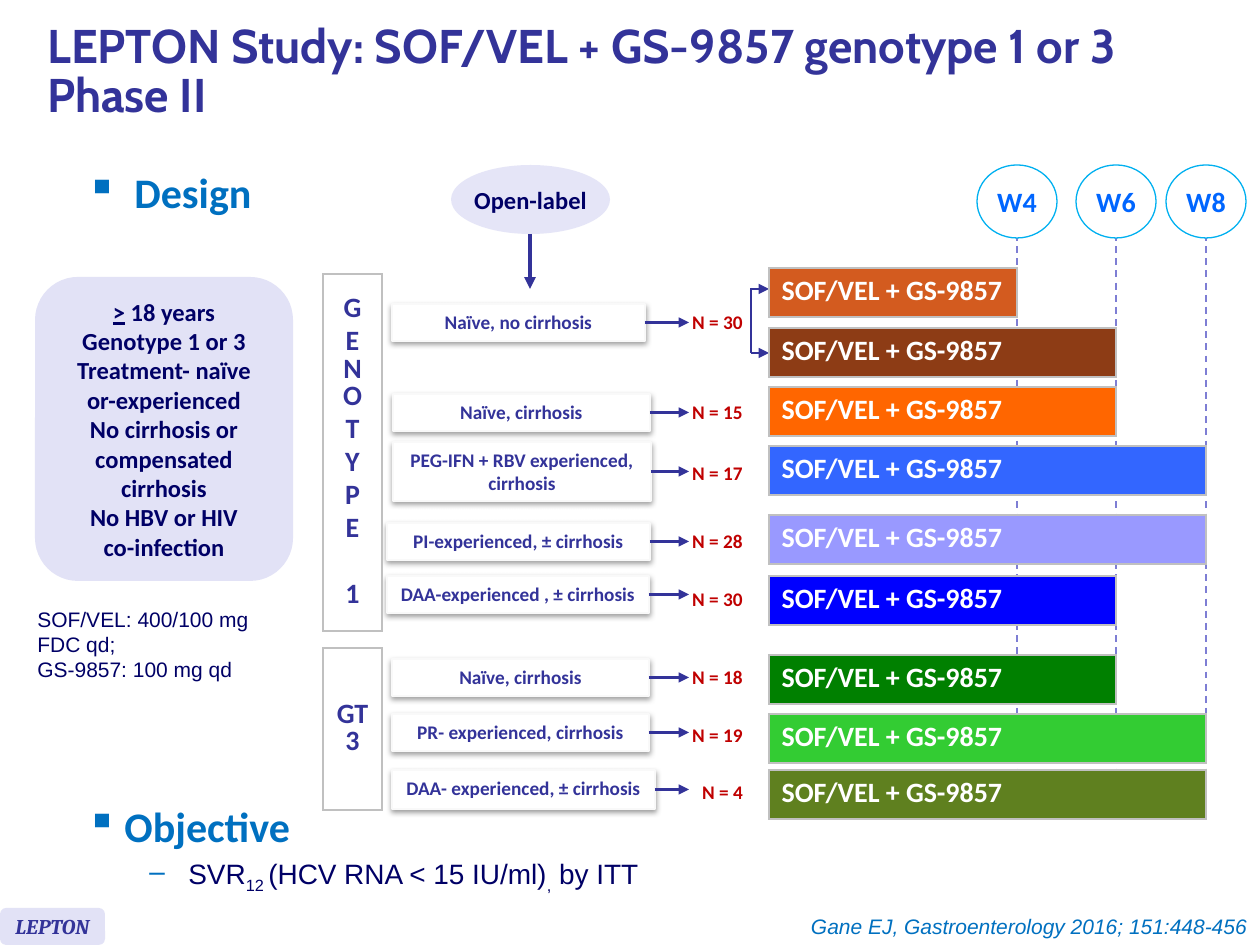
from lxml import etree
from pptx import Presentation, util as u
from pptx.dml.color import RGBColor
from pptx.enum import dml, shapes, text as t
from pptx.oxml import ns

PX = 914400 / 126
INDIGO = RGBColor(0x33, 0x33, 0x99)
NAVY = RGBColor(0x00, 0x00, 0x66)
BLUE = RGBColor(0x00, 0x70, 0xC0)
BRIGHT_BLUE = RGBColor(0x00, 0x66, 0xFF)
SKY = RGBColor(0x00, 0xB0, 0xF0)
RED = RGBColor(0xC0, 0x00, 0x00)
WHITE = RGBColor(0xFF, 0xFF, 0xFF)
OFF_WHITE = RGBColor(0xF9, 0xF9, 0xF9)
LAVENDER = RGBColor(0xE2, 0xE2, 0xF6)
PALE_LAVENDER = RGBColor(0xE5, 0xE5, 0xF7)
PERIWINKLE = RGBColor(0x7E, 0x7E, 0xD4)
LEFT, CENTER, RIGHT = t.PP_ALIGN.LEFT, t.PP_ALIGN.CENTER, t.PP_ALIGN.RIGHT
TOP, MIDDLE = t.MSO_ANCHOR.TOP, t.MSO_ANCHOR.MIDDLE
RECTANGLE = shapes.MSO_SHAPE.RECTANGLE
ROUNDED = shapes.MSO_SHAPE.ROUNDED_RECTANGLE
OVAL = shapes.MSO_SHAPE.OVAL

presentation = Presentation()
presentation.slide_width, presentation.slide_height = u.Inches(10), u.Inches(7.5)
slide = presentation.slides.add_slide(presentation.slide_layouts[6])


def write(frame, content, size, color, font="Calibri", bold=True, italic=False,
          align=LEFT, before=0, spacing=None, bullet=None):
    """Add one paragraph; content is a string or a list of (text, baseline, underline)."""
    paragraph = frame.add_paragraph() if frame.text else frame.paragraphs[0]
    paragraph.alignment = align
    paragraph.space_before = u.Pt(before)
    paragraph.line_spacing = spacing
    if bullet:
        character, margin, hanging = bullet
        properties = paragraph._p.get_or_add_pPr()
        properties.set("marL", str(int(margin * PX)))
        properties.set("indent", str(int(-hanging * PX)))
        bullet_color = etree.SubElement(properties, ns.qn("a:buClr"))
        etree.SubElement(bullet_color, ns.qn("a:srgbClr"), val=str(BLUE))
        etree.SubElement(properties, ns.qn("a:buChar"), char=character)
    runs = [(content, 0, False)] if isinstance(content, str) else content
    for words, baseline, underline in runs:
        run = paragraph.add_run()
        run.text = words
        run.font.size, run.font.name = u.Pt(size), font
        run.font.bold, run.font.italic = bold, italic
        run.font.color.rgb = color
        if underline:
            run.font.underline = True
        if baseline:
            run._r.get_or_add_rPr().set("baseline", str(baseline * 1000))


def draw_line(x1, y1, x2, y2, color=INDIGO, width=1.5, arrow=True):
    ends = [int(value * PX) for value in (x1, y1, x2, y2)]
    connector = slide.shapes.add_connector(shapes.MSO_CONNECTOR.STRAIGHT, *ends)
    connector.line.color.rgb = color
    connector.line.width = u.Pt(width)
    if arrow:
        etree.SubElement(connector.line._get_or_add_ln(), ns.qn("a:tailEnd"), type="triangle")
    etree.SubElement(connector._element.spPr, ns.qn("a:effectLst"))
    return connector


# Week lines, behind everything else
week_ends = {"W4": 1017, "W6": 1116, "W8": 1206}
for x in week_ends.values():
    week_line = draw_line(x, 234, x, 780, PERIWINKLE, 1, arrow=False)
    week_line.line.dash_style = dml.MSO_LINE.DASH

# Shapes: kind, left, top, width, height, fill, line, anchor, wrap, paragraphs, format
criteria = [
    [(">", 0, True), (" 18 years", 0, False)], "Genotype 1 or 3", "Treatment- naïve",
    "or-experienced", "No cirrhosis or compensated cirrhosis", "No HBV or HIV", "co-infection",
]
arms = [
    (392, 304, 253, 37, "Naïve, no cirrhosis"),
    (393, 394, 257, 37, "Naïve, cirrhosis"),
    (393, 442, 258, 59, "PEG-IFN + RBV experienced, cirrhosis"),
    (387, 523, 263, 37, "PI-experienced, ± cirrhosis"),
    (387, 576, 262, 37, "DAA-experienced , ± cirrhosis"),
    (392, 659, 257, 37, "Naïve, cirrhosis"),
    (392, 714, 257, 37, "PR- experienced, cirrhosis"),
    (392, 770, 263, 39, "DAA- experienced, ± cirrhosis"),
]
week_style = dict(size=16, color=BRIGHT_BLUE)
arm_style = dict(size=11, color=INDIGO)
panels = [
    (ROUNDED, 35, 277, 258, 304, LAVENDER, None, MIDDLE, True, criteria,
     dict(size=14, color=NAVY)),
    (OVAL, 451, 165, 159, 69, PALE_LAVENDER, None, MIDDLE, False, ["Open-label"],
     dict(size=14, color=NAVY)),
    (ROUNDED, 0, 908, 105, 37, LAVENDER, None, MIDDLE, False, ["LEPTON"],
     dict(size=12, color=INDIGO, font="Cambria", italic=True)),
]
panels += [(OVAL, x - 40, 165, 80, 73, WHITE, SKY, MIDDLE, False, [week], week_style)
           for week, x in week_ends.items()]
panels += [(RECTANGLE, *box, WHITE, OFF_WHITE, TOP, True, [label], arm_style)
           for *box, label in arms]

for kind, left, top, width, height, fill, line, anchor, wrap, paragraphs, style in panels:
    shape = slide.shapes.add_shape(kind, *[int(v * PX) for v in (left, top, width, height)])
    shape.shadow.inherit = False
    shape.fill.solid()
    shape.fill.fore_color.rgb = fill
    if line is None:
        shape.line.fill.background()
    else:
        shape.line.color.rgb = line
        shape.line.width = u.Pt(0.75)
    frame = shape.text_frame
    frame.word_wrap, frame.vertical_anchor = wrap, anchor
    if paragraphs is criteria:
        frame.margin_left = frame.margin_right = int(5 * PX)
    for content in paragraphs:
        write(frame, content, align=CENTER, **style)

    # Shadow and outgoing arrow of each study arm
    if kind == RECTANGLE:
        effects = shape._element.spPr.find(ns.qn("a:effectLst"))
        shadow = etree.SubElement(effects, ns.qn("a:outerShdw"), blurRad="40000",
                                  dist="20000", dir="5400000", rotWithShape="0")
        shadow_color = etree.SubElement(shadow, ns.qn("a:srgbClr"), val="000000")
        etree.SubElement(shadow_color, ns.qn("a:alpha"), val="38000")
        middle = top + height / 2
        draw_line(left + width, middle, 689, middle).begin_connect(shape, 3)

# Open-label arrow, then the bracket from the first arm to its two treatments
draw_line(530, 234, 530, 289, width=2.25)
draw_line(751, 288, 751, 353, arrow=False)
for y in (289, 353):
    draw_line(751, y, 769, y)

# Treatment bars and genotype columns, each a one-cell table
bars = [
    (268, "W4", "D35B1F"), (328, "W6", "8D3C15"), (387, "W6", "FF6600"),
    (446, "W8", "3366FF"), (515, "W8", "9999FF"), (576, "W6", "0000FF"),
    (655, "W6", "008000"), (714, "W8", "33CC33"), (770, "W8", "5F801F"),
]
genotype = [("G", 0), ("E", 3.2), ("N", 0), ("O", 0), ("T", 3.2),
            ("Y", 3.2), ("P", 3.2), ("E", 3.2), ("1", 22)]
tables = [(769, top, week_ends[week] - 769, 49, RGBColor.from_string(fill), WHITE, LEFT,
           [("SOF/VEL + GS-9857", 0)]) for top, week, fill in bars]
tables += [(323, 274, 59, 357, WHITE, INDIGO, CENTER, genotype),
           (323, 648, 59, 162, WHITE, INDIGO, CENTER, [("GT3", 0)])]
for *box, fill, color, align, paragraphs in tables:
    table = slide.shapes.add_table(1, 1, *[int(value * PX) for value in box]).table
    table.first_row = table.horz_banding = False
    cell = table.cell(0, 0)
    cell.vertical_anchor = MIDDLE
    cell.fill.solid()
    cell.fill.fore_color.rgb = fill
    for index, side in enumerate(("lnL", "lnR", "lnT", "lnB")):
        border = etree.Element(ns.qn(f"a:{side}"), w="12700")
        border_fill = etree.SubElement(border, ns.qn("a:solidFill"))
        etree.SubElement(border_fill, ns.qn("a:srgbClr"), val="C0C0C0")
        cell._tc.get_or_add_tcPr().insert(index, border)
    for words, before in paragraphs:
        write(cell.text_frame, words, 16, color, align=align, before=before, spacing=0.8)

# Text boxes: left, top, width, height, anchor, wrap, paragraphs with their format
heading = dict(size=24, color=BLUE)
dose = dict(size=12, color=NAVY, font="Arial", bold=False)
outcome = [("SVR", 0, False), ("12 ", -25, False), ("(HCV RNA < 15 IU/ml)", 0, False),
           (",", -25, False), (" by ITT", 0, False)]
text_boxes = [
    (35, 6, 1225, 135, MIDDLE, True, [
        ("LEPTON Study: SOF/VEL + GS-9857 genotype 1 or 3 Phase II",
         dict(size=27, color=INDIGO, font="Cabin", spacing=0.85))]),
    (74, 160, 250, 79, TOP, True, [("Design", dict(heading, bullet=("▪", 48, 48)))]),
    (25, 600, 287, 89, TOP, True, [
        (words, dose) for words in ("SOF/VEL: 400/100 mg", "FDC qd;", "GS-9857: 100 mg qd")]),
    (74, 794, 1150, 115, TOP, True, [
        ("Objective", dict(heading, bullet=("▪", 38, 38))),
        (outcome, dict(size=16, color=NAVY, font="Arial", bold=False, before=3.2,
                       bullet=("–", 102, 39)))]),
    (789, 907, 471, 38, TOP, False, [
        ("Gane EJ, Gastroenterology 2016; 151:448-456",
         dict(size=12, color=BLUE, font="Arial", bold=False, italic=True, align=RIGHT))]),
]
patients = [(304, 30), (394, 15), (455, 17), (523, 28), (581, 30), (659, 18), (717, 19), (774, 4)]
for top, count in patients:
    left = 679 if count > 9 else 689
    text_boxes.append((left, top, 756 - left, 37, TOP, False, [
        (f"N = {count}", dict(size=11, color=RED, align=CENTER))]))
for *box, anchor, wrap, paragraphs in text_boxes:
    frame = slide.shapes.add_textbox(*[int(value * PX) for value in box]).text_frame
    frame.word_wrap, frame.vertical_anchor = wrap, anchor
    for content, style in paragraphs:
        write(frame, content, **style)

presentation.save("out.pptx")
